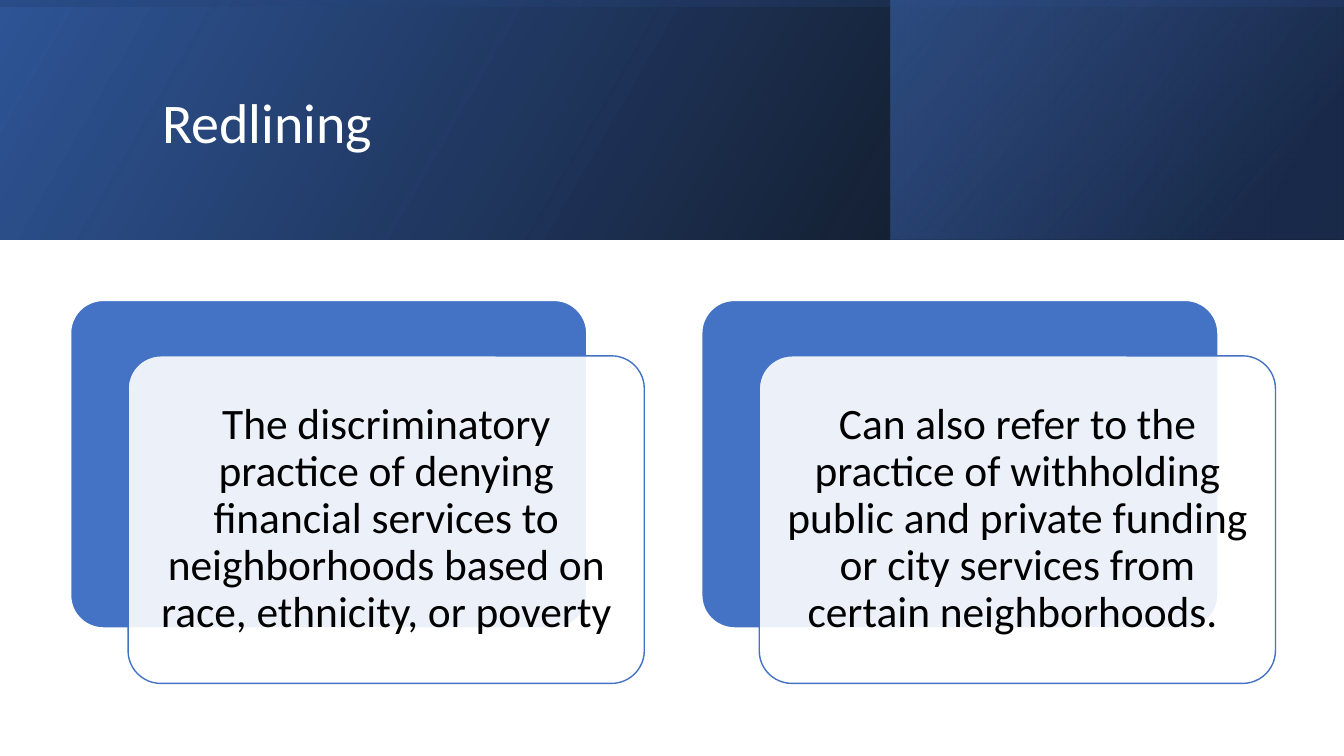
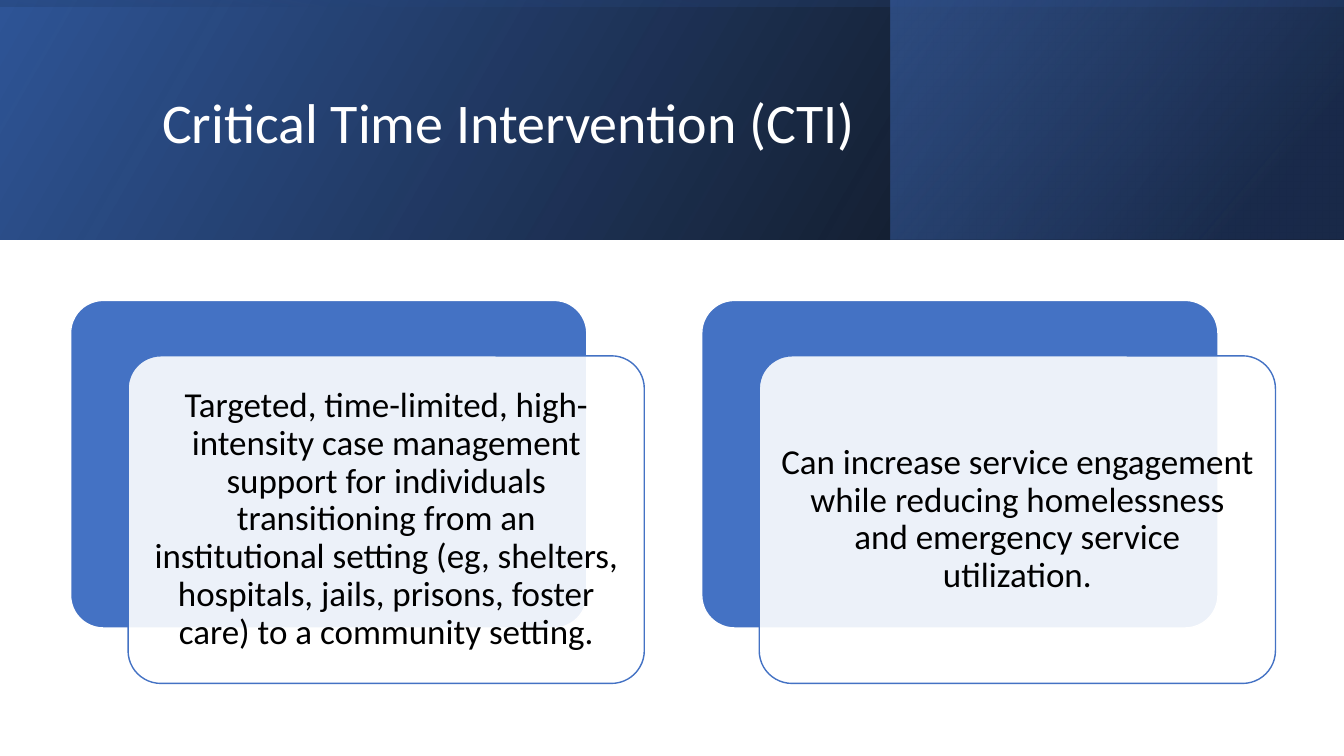
import pptx
import pptx.util
import pptx.dml.color
import pptx.enum.shapes
import pptx.enum.text
import pptx.oxml.ns
from lxml import etree

Inches = pptx.util.Inches
Pt = pptx.util.Pt
SHAPE = pptx.enum.shapes.MSO_SHAPE
ALIGN = pptx.enum.text.PP_ALIGN
ANCHOR = pptx.enum.text.MSO_ANCHOR

FONT = "Calibri"
WHITE, BLACK = "FFFFFF", "000000"
BLUE, DEEP_BLUE, NAVY = "4472C4", "2F5597", "203864"
SLIDE_W, SLIDE_H, BAND_H = 13.33, 7.5, 2.38
CARD_W, CARD_H = 5.12, 3.25
CARD_LEFT, CARD_TOP, CARD_STEP = 0.7, 2.98, 6.26
FRONT_DX, FRONT_DY = 0.57, 0.55

SLIDES = [
    ("Redlining", 31, 0.13, [
        "The discriminatory practice of denying financial services to "
        "neighborhoods based on race, ethnicity, or poverty",
        "Can also refer to the practice of withholding public and private "
        "funding or city services from certain neighborhoods. ",
    ]),
    ("Critical Time Intervention (CTI)", 25, 0.11, [
        "Targeted, time-limited, high-intensity case management support for "
        "individuals transitioning from an institutional setting (eg, "
        "shelters, hospitals, jails, prisons, foster care) to a community "
        "setting.",
        "Can increase service engagement while reducing homelessness and "
        "emergency service utilization.",
    ]),
]


def rgb(color):
    return pptx.dml.color.RGBColor.from_string(color)


def set_alphas(sp, alphas):
    colors = sp._element.spPr.xpath("./a:solidFill/a:srgbClr | ./a:gradFill//a:srgbClr")
    for color, alpha in zip(colors, alphas):
        etree.SubElement(color, pptx.oxml.ns.qn("a:alpha"), val=str(alpha * 1000))


def add_box(s, kind, left, top, width, height):
    sp = s.shapes.add_shape(kind, Inches(left), Inches(top), Inches(width), Inches(height))
    sp.shadow.inherit = False
    return sp


def add_gradient(s, left, top, width, height, stops, angle, rotation=0):
    sp = add_box(s, SHAPE.RECTANGLE, left, top, width, height)
    sp.rotation = rotation
    sp._element.spPr.xfrm.set("flipH", "1")
    sp.line.fill.background()
    sp.fill.gradient()
    sp.fill.gradient_angle = angle
    for stop, (position, color, alpha) in zip(sp.fill.gradient_stops, stops):
        stop.position = position
        stop.color.rgb = rgb(color)
    set_alphas(sp, [alpha for position, color, alpha in stops])


def add_banner(s):
    add_gradient(s, 0, 0, SLIDE_W, BAND_H,
                 [(0, BLACK, 96), (1, DEEP_BLUE, 100)], 30)
    add_gradient(s, 8.83, 0, 4.49, BAND_H,
                 [(0.19, NAVY, 68), (1, BLUE, 48)], 40)
    offset = (SLIDE_W - BAND_H) / 2
    add_gradient(s, offset, -offset, BAND_H, SLIDE_W,
                 [(0.23, DEEP_BLUE, 16), (0.99, BLACK, 45)], 10, 270)


def write_text(sp, text, size, color, align):
    tf = sp.text_frame
    tf.word_wrap = True
    tf.vertical_anchor = ANCHOR.MIDDLE
    p = tf.paragraphs[0]
    p.text = text
    p.alignment = align
    p.line_spacing = 0.9
    p.font.name = FONT
    p.font.size = Pt(size)
    p.font.color.rgb = rgb(color)


def add_title(s, text):
    sp = s.shapes.add_textbox(Inches(1.51), Inches(0.38), Inches(10.63), Inches(1.72))
    write_text(sp, text, 40, WHITE, ALIGN.LEFT)


def add_panel(s, left, top, fill, line, alpha=100):
    sp = add_box(s, SHAPE.ROUNDED_RECTANGLE, left, top, CARD_W, CARD_H)
    sp.adjustments[0] = 0.1
    sp.fill.solid()
    sp.fill.fore_color.rgb = rgb(fill)
    sp.line.color.rgb = rgb(line)
    sp.line.width = Pt(1)
    set_alphas(sp, [alpha])
    return sp


def add_card(s, left, text, size, inset):
    add_panel(s, left, CARD_TOP, BLUE, WHITE)
    sp = add_panel(s, left + FRONT_DX, CARD_TOP + FRONT_DY, WHITE, BLUE, 90)
    tf = sp.text_frame
    tf.margin_left = tf.margin_right = Inches(inset)
    tf.margin_top = tf.margin_bottom = Inches(inset)
    write_text(sp, text, size, BLACK, ALIGN.CENTER)


def main():
    prs = pptx.Presentation()
    prs.slide_width = Inches(SLIDE_W)
    prs.slide_height = Inches(SLIDE_H)
    for title, size, inset, texts in SLIDES:
        s = prs.slides.add_slide(prs.slide_layouts[6])
        add_banner(s)
        add_title(s, title)
        for i, text in enumerate(texts):
            add_card(s, CARD_LEFT + i * CARD_STEP, text, size, inset)
    prs.save("out.pptx")


if __name__ == "__main__":
    main()
